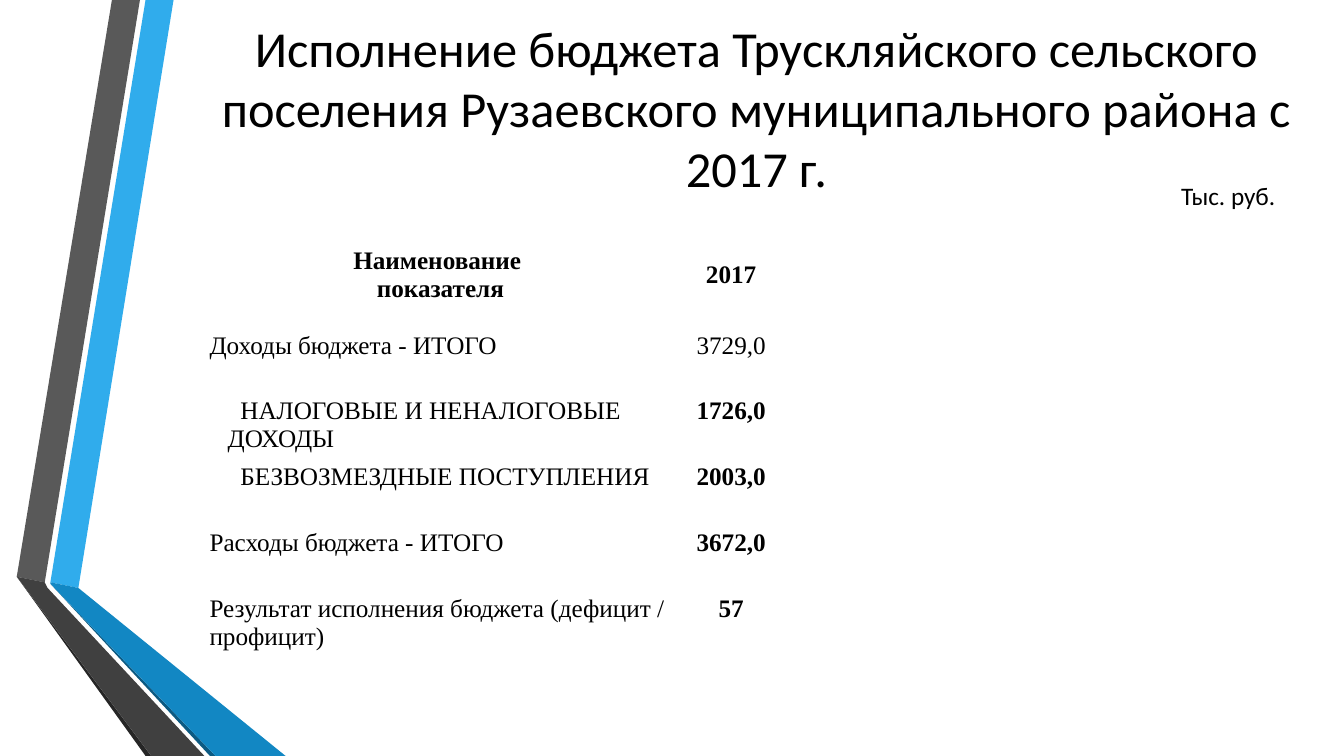
"""Build the slide on the execution of a rural settlement's 2017 budget."""
from lxml import etree
from pptx import Presentation
from pptx.dml.color import RGBColor
from pptx.enum import text
from pptx.oxml import ns
from pptx.util import Pt

RIBBONS = [
    ("30ACEC", [(36, 416), (55.5, 420), (124.5, 0), (104.5, 0)]),
    ("595959", [(100, 0), (80, 0), (11.5, 412.5), (31.5, 415.5)]),
    ("262626", [(11.5, 412.5), (104.5, 540), (108.5, 540)]),
    ("0C5A82", [(36, 417), (150, 540), (154, 540)]),
    ("1287C3", [(36, 417), (154, 540), (204, 540), (55.5, 420), (36, 416)]),
    ("404040", [(145.5, 540), (34.5, 420), (31.5, 415.5), (11.5, 412.5), (108.5, 540)]),
]
ROWS = [
    ("Наименование \nпоказателя", "2017"),
    ("Доходы бюджета - ИТОГО", "3729,0"),
    ("НАЛОГОВЫЕ И НЕНАЛОГОВЫЕ ДОХОДЫ", "1726,0"),
    ("БЕЗВОЗМЕЗДНЫЕ ПОСТУПЛЕНИЯ", "2003,0"),
    ("Расходы бюджета - ИТОГО", "3672,0"),
    ("Результат исполнения бюджета (дефицит / профицит)", "57"),
]
TITLE = ("Исполнение бюджета Трускляйского сельского поселения "
         "Рузаевского муниципального района с 2017 г.")


def rgb(color):
    return RGBColor.from_string(color)


def write(p, value, font, size, align, bold=False):
    p.text = value
    p.alignment = align
    for r in p.runs:
        r.font.name, r.font.size, r.font.bold = font, Pt(size), bold
        r.font.color.rgb = rgb("000000")


prs = Presentation()
prs.slide_width, prs.slide_height = Pt(960), Pt(540)
s = prs.slides.add_slide(prs.slide_layouts[6])
left, center = text.PP_ALIGN.LEFT, text.PP_ALIGN.CENTER

for color, points in RIBBONS:
    fb = s.shapes.build_freeform(*points[0], scale=Pt(1))
    fb.add_line_segments(points[1:], close=True)
    sp = fb.convert_to_shape()
    sp.shadow.inherit = False
    sp.fill.solid()
    sp.fill.fore_color.rgb = rgb(color)
    sp.line.fill.background()

tf = s.shapes.add_textbox(Pt(129.6), Pt(28.8), Pt(821.5), Pt(95.8)).text_frame
tf.word_wrap = True
tf.vertical_anchor = text.MSO_ANCHOR.MIDDLE
write(tf.paragraphs[0], TITLE, "Calibri", 36, center)

table = s.shapes.add_table(len(ROWS), 2, Pt(149), Pt(156.2), Pt(415.4), Pt(315)).table
table.horz_banding = False
table.columns[0].width, table.columns[1].width = Pt(331.2), Pt(84.2)
for i, row in enumerate(ROWS):
    table.rows[i].height = Pt(47 if i else 80)
    for j, value in enumerate(row):
        cell = table.cell(i, j)
        detail = j == 0 and i in (2, 3)
        cell.margin_left = Pt(13.7 if detail else 0.7)
        cell.margin_right = cell.margin_top = Pt(0.7)
        cell.margin_bottom = 0
        cell.vertical_anchor = text.MSO_ANCHOR.TOP if i else text.MSO_ANCHOR.MIDDLE
        p = cell.text_frame.paragraphs[0]
        bold = i == 0 or (j == 1 and i > 1)
        write(p, value, "Times New Roman", 18, center if j or not i else left, bold)
        if detail:
            p._p.get_or_add_pPr().set("indent", str(Pt(9)))
        tcPr = cell._tc.get_or_add_tcPr()
        for side in ("lnL", "lnR", "lnT", "lnB"):
            ln = etree.SubElement(tcPr, ns.qn("a:" + side), w=str(Pt(1)))
            fill = etree.SubElement(ln, ns.qn("a:solidFill"))
            etree.SubElement(fill, ns.qn("a:srgbClr"), val="FFFFFF")
        cell.fill.background()

tf = s.shapes.add_textbox(Pt(836.6), Pt(125.3), Pt(84.2), Pt(28.8)).text_frame
tf.word_wrap = False
write(tf.paragraphs[0], "Тыс. руб.", "Calibri", 18, left)

prs.save("out.pptx")
